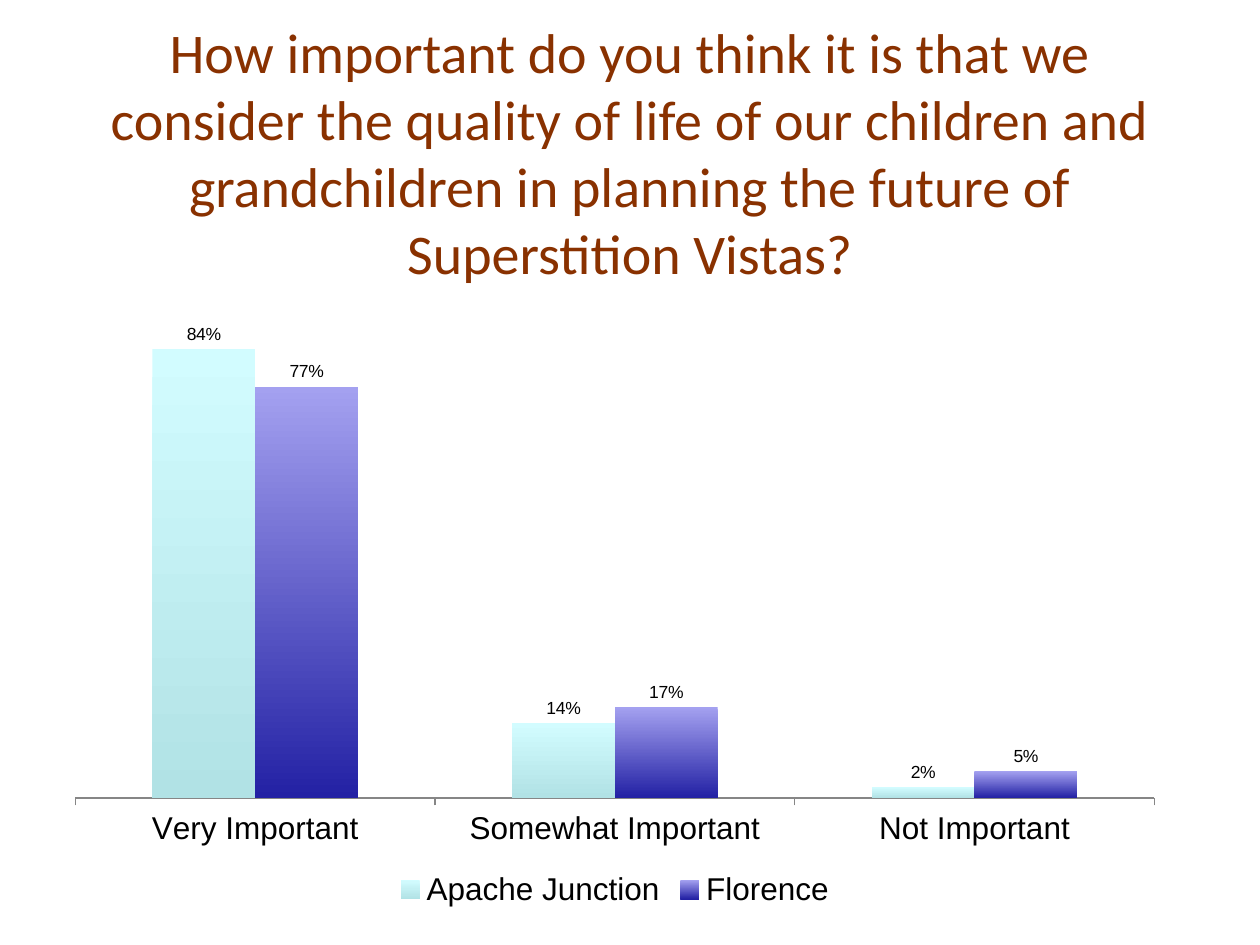
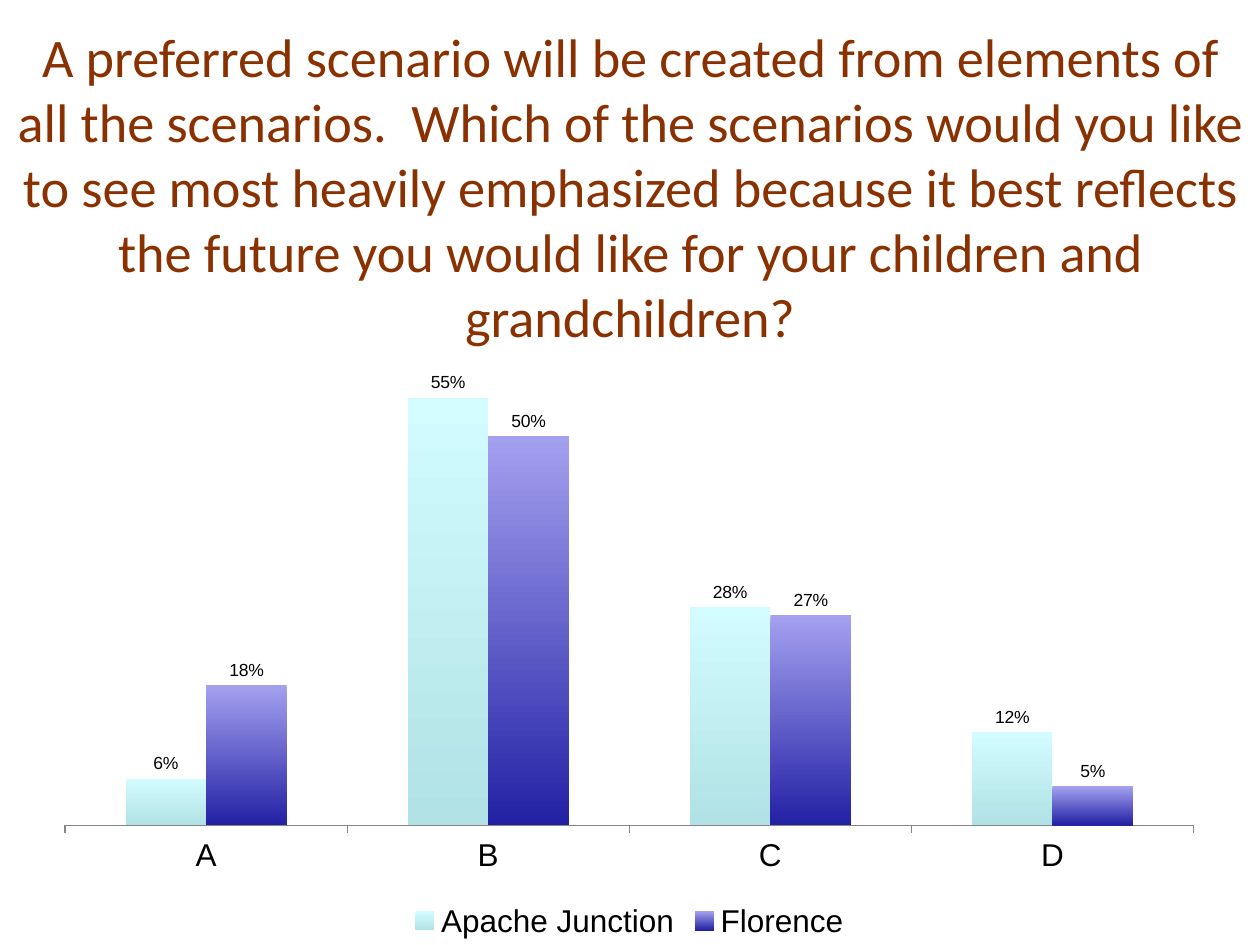
from dataclasses import dataclass

from lxml import etree
from pptx import Presentation
from pptx import util as u
from pptx.chart.data import CategoryChartData
from pptx.dml.color import RGBColor
from pptx.enum import chart as charts, text
from pptx.oxml.ns import qn

SERIES = ("Apache Junction", "Florence")

SURVEY = [
    {
        "question": "How important do you think it is that we consider the quality of life "
                    "of our children and grandchildren in planning the future of "
                    "Superstition Vistas?",
        "question_size": 32,
        "question_area": (0.05, 0.077, 0.9, 0.167),
        "chart_area": (0.042, 0.323, 0.892, 0.644),
        "plot_height": 0.79,
        "top_value": 0.9,
        "answers": ("Very Important", "Somewhat Important", "Not Important"),
        "shares": ((0.84, 0.14, 0.02), (0.77, 0.17, 0.05)),
    },
    {
        "question": "A preferred scenario will be created from elements of all the scenarios.  "
                    "Which of the scenarios would you like to see most heavily emphasized "
                    "because it best reflects the future you would like for your children "
                    "and grandchildren?",
        "question_size": 31,
        "question_area": (0, 0.033, 1, 0.327),
        "chart_area": (0.033, 0.367, 0.933, 0.633),
        "plot_height": 0.78,
        "top_value": 0.6,
        "answers": ("A", "B", "C", "D"),
        "shares": ((0.06, 0.55, 0.28, 0.12), (0.18, 0.5, 0.27, 0.05)),
    },
]


@dataclass(frozen=True)
class Theme:
    width: float = 10
    height: float = 7.5
    title_font: str = "Calibri"
    chart_font: str = "Arial"
    title_color: str = "893100"
    chart_color: str = "000000"
    axis_color: str = "868686"
    gradients: tuple = (("D2FCFF", "B1E2E5"), ("A4A1F0", "2321A4"))
    chart_size: int = 18
    label_size: int = 10


THEME = Theme()


def rgb(value):
    return RGBColor.from_string(value)


def to_lengths(area):
    left, top, width, height = area
    return (u.Inches(left * THEME.width), u.Inches(top * THEME.height),
            u.Inches(width * THEME.width), u.Inches(height * THEME.height))


def set_font(font, name, size, color):
    font.name = name
    font.size = u.Pt(size)
    font.color.rgb = rgb(color)


def add_question(page, topic):
    box = page.shapes.title
    box.left, box.top, box.width, box.height = to_lengths(topic["question_area"])
    frame = box.text_frame
    frame.text = topic["question"]
    frame.word_wrap = True
    frame.auto_size = text.MSO_AUTO_SIZE.NONE
    frame.vertical_anchor = text.MSO_ANCHOR.MIDDLE
    para = frame.paragraphs[0]
    para.alignment = text.PP_ALIGN.CENTER
    set_font(para.font, THEME.title_font, topic["question_size"], THEME.title_color)


def place_plot(chart, height):
    area = chart.plots[0]._element.getparent()
    for old in area.findall(qn("c:layout")):
        area.remove(old)
    layout = etree.Element(qn("c:layout"))
    manual = etree.SubElement(layout, qn("c:manualLayout"))
    settings = (("layoutTarget", "inner"), ("xMode", "edge"), ("yMode", "edge"),
                ("x", 0.02), ("y", 0.02), ("w", 0.96), ("h", height))
    for tag, value in settings:
        etree.SubElement(manual, qn(f"c:{tag}")).set("val", str(value))
    area.insert(0, layout)


def paint_series(series, colors):
    fill = series.format.fill
    fill.gradient()
    fill.gradient_angle = 270
    for stop, color in zip(fill.gradient_stops, colors):
        stop.color.rgb = rgb(color)
    series.format.line.fill.background()
    series.invert_if_negative = False


def add_results(page, topic):
    data = CategoryChartData(number_format="0%")
    data.categories = topic["answers"]
    for name, values in zip(SERIES, topic["shares"]):
        data.add_series(name, values)
    chart = page.shapes.add_chart(charts.XL_CHART_TYPE.COLUMN_CLUSTERED,
                                  *to_lengths(topic["chart_area"]), data).chart
    set_font(chart.font, THEME.chart_font, THEME.chart_size, THEME.chart_color)
    chart.has_title = False
    chart.has_legend = True
    chart.legend.position = charts.XL_LEGEND_POSITION.BOTTOM
    chart.legend.include_in_layout = False

    shares = chart.value_axis
    shares.minimum_scale = 0
    shares.maximum_scale = topic["top_value"]
    shares.has_major_gridlines = False
    shares.visible = False

    answers = chart.category_axis
    answers.major_tick_mark = charts.XL_TICK_MARK.OUTSIDE
    answers.format.line.color.rgb = rgb(THEME.axis_color)
    answers.format.line.width = u.Pt(0.75)

    plot = chart.plots[0]
    plot.gap_width = 150
    plot.overlap = 0
    plot.vary_by_categories = False
    plot.has_data_labels = True
    labels = plot.data_labels
    labels.show_value = True
    labels.number_format = "0%"
    labels.number_format_is_linked = False
    labels.position = charts.XL_LABEL_POSITION.OUTSIDE_END
    set_font(labels.font, THEME.chart_font, THEME.label_size, THEME.chart_color)
    for series, colors in zip(plot.series, THEME.gradients):
        paint_series(series, colors)
    place_plot(chart, topic["plot_height"])


def main():
    deck = Presentation()
    deck.slide_width = u.Inches(THEME.width)
    deck.slide_height = u.Inches(THEME.height)
    title_only = deck.slide_layouts.get_by_name("Title Only")
    for topic in SURVEY:
        page = deck.slides.add_slide(title_only)
        add_question(page, topic)
        add_results(page, topic)
    deck.save("out.pptx")


if __name__ == "__main__":
    main()
